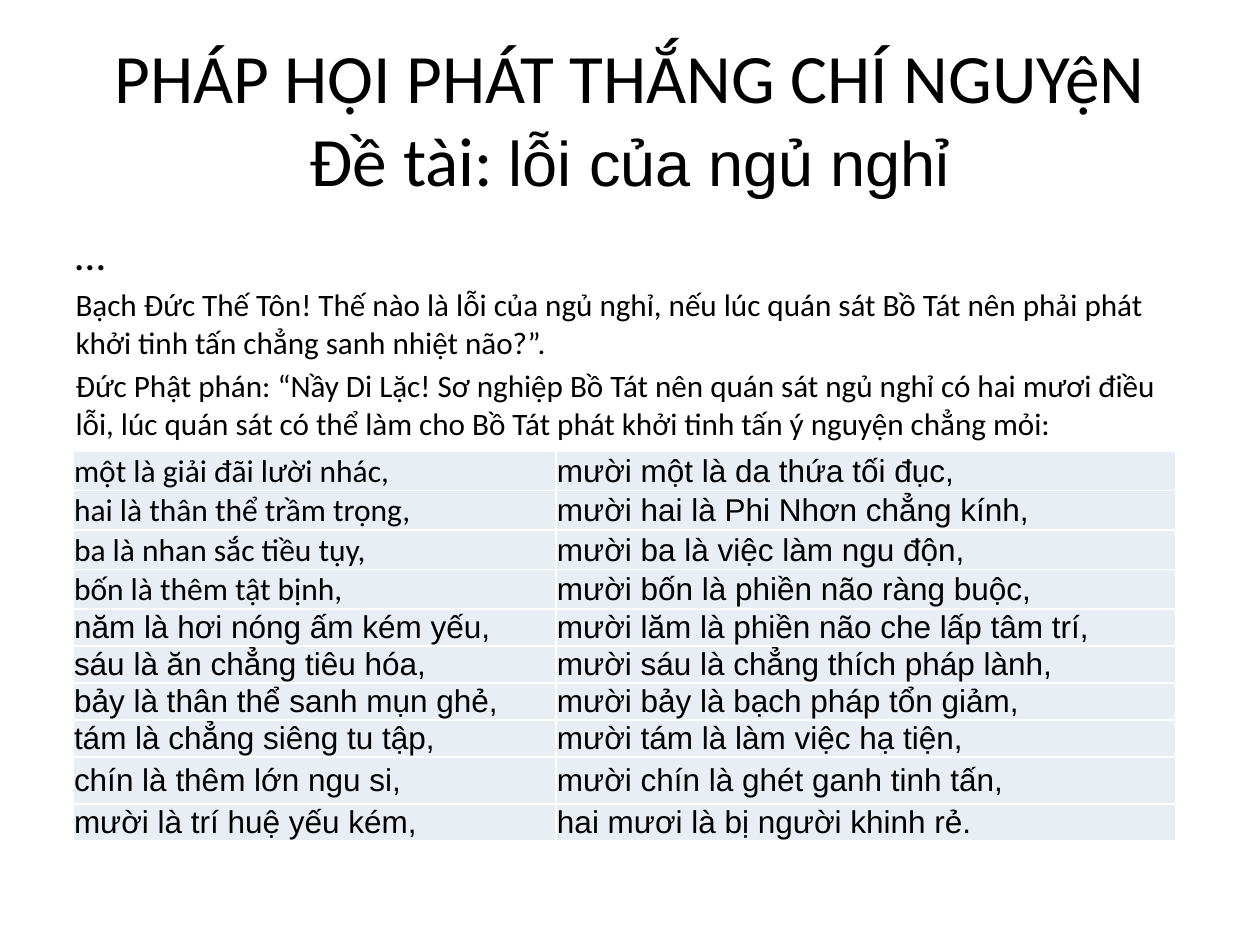
from copy import deepcopy
from dataclasses import dataclass

from lxml.etree import SubElement
from pptx import Presentation
from pptx.dml.color import RGBColor as Rgb
from pptx.enum.text import MSO_ANCHOR as Anchor, MSO_AUTO_SIZE as Fit, PP_ALIGN as Align
from pptx.oxml.ns import qn
from pptx.util import Inches, Pt

SCALE = Inches(1) / 126


@dataclass(frozen=True)
class Theme:
    main: str = "Calibri"
    alt: str = "Arial"
    ink: Rgb = Rgb(0, 0, 0)
    band: Rgb = Rgb(0xE9, 0xED, 0xF4)
    rule: str = "FFFFFF"
    head: float = 39.6
    sub: float = 36
    lead: float = 24.8
    body: float = 17.8
    cell: float = 18


THEME = Theme()

HEAD = "PHÁP HỘI PHÁT THẮNG CHÍ NGUYệN\vĐề tài: "
TOPIC = "lỗi của ngủ nghỉ"
BODY = [
    "…",
    "Bạch Đức Thế Tôn! Thế nào là lỗi của ngủ nghỉ, nếu lúc quán sát Bồ Tát "
    "nên phải phát khởi tinh tấn chẳng sanh nhiệt não?”.",
    "Đức Phật phán: “Nầy Di Lặc! Sơ nghiệp Bồ Tát nên quán sát ngủ nghỉ có hai "
    "mươi điều lỗi, lúc quán sát có thể làm cho Bồ Tát phát khởi tinh tấn ý "
    "nguyện chẳng mỏi:",
]
FAULTS = [
    ("một là giải đãi lười nhác,", "mười một là da thứa tối đục,"),
    ("hai là thân thể trầm trọng,", "mười hai là Phi Nhơn chẳng kính,"),
    ("ba là nhan sắc tiều tụy,", "mười ba là việc làm ngu độn,"),
    ("bốn là thêm tật bịnh,", "mười bốn là phiền não ràng buộc,"),
    ("năm là hơi nóng ấm kém yếu,", "mười lăm là phiền não che lấp tâm trí,"),
    ("sáu là ăn chẳng tiêu hóa,", "mười sáu là chẳng thích pháp lành,"),
    ("bảy là thân thể sanh mụn ghẻ,", "mười bảy là bạch pháp tổn giảm,"),
    ("tám là chẳng siêng tu tập,", "mười tám là làm việc hạ tiện,"),
    ("chín là thêm lớn ngu si,", "mười chín là ghét ganh tinh tấn,"),
    ("mười là trí huệ yếu kém,", "hai mươi là bị người khinh rẻ."),
]
COLS = (483, 620)
ROW, TALL = 37, 47
TALL_ROW = 8
MAIN_ROWS = 4  # rows whose first cell uses the main font


def px(n):
    return round(n * SCALE)


def place(shape, *box):
    shape.left, shape.top, shape.width, shape.height = map(px, box)


def style(run, size, face=THEME.main):
    font = run.font
    font.size, font.name = Pt(size), face
    font.color.rgb = THEME.ink


def add_title(shape):
    place(shape, 63, 38, 1134, 158)
    frame = shape.text_frame
    frame.text = HEAD
    frame.auto_size = Fit.NONE
    frame.vertical_anchor = Anchor.MIDDLE
    para = frame.paragraphs[0]
    para.alignment = Align.CENTER
    for run in para.runs:
        style(run, THEME.head)
    # The line break carries the same size as the text around it.
    look = para.runs[0].font._element
    para._p.find(qn("a:br")).append(deepcopy(look))
    topic = para.add_run()
    topic.text = TOPIC
    style(topic, THEME.sub, THEME.alt)


def add_body(shape):
    place(shape, 63, 221, 1134, 661)
    frame = shape.text_frame
    frame.text = "\n".join(BODY)
    frame.auto_size = Fit.NONE
    for i, para in enumerate(frame.paragraphs):
        props = para._p.get_or_add_pPr()
        props.set("marL", "0")
        props.set("indent", "0")
        SubElement(props, qn("a:buNone"))
        style(para.runs[0], THEME.body if i else THEME.lead)


def add_rules(cell):
    """Draw a thin line on each side; call before the fill is set."""
    props = cell._tc.get_or_add_tcPr()
    for side in ("lnL", "lnR", "lnT", "lnB"):
        line = SubElement(props, qn(f"a:{side}"), w=str(Pt(1)))
        fill = SubElement(line, qn("a:solidFill"))
        SubElement(fill, qn("a:srgbClr"), val=THEME.rule)


def fill_cell(cell, text, main):
    cell.text = text
    cell.vertical_anchor = Anchor.MIDDLE
    cell.margin_left = cell.margin_right = cell.margin_top = px(1)
    cell.margin_bottom = 0
    add_rules(cell)
    cell.fill.solid()
    cell.fill.fore_color.rgb = THEME.band
    para = cell.text_frame.paragraphs[0]
    para.alignment = Align.JUSTIFY if main else Align.LEFT
    style(para.runs[0], THEME.cell, THEME.main if main else THEME.alt)


def add_faults(slide):
    high = [TALL if i == TALL_ROW else ROW for i in range(len(FAULTS))]
    box = map(px, (73, 451, sum(COLS), sum(high)))
    grid = slide.shapes.add_table(len(FAULTS), len(COLS), *box).table
    grid.first_row = grid.horz_banding = False
    for col, wide in zip(grid.columns, COLS):
        col.width = px(wide)
    for r, pair in enumerate(FAULTS):
        grid.rows[r].height = px(high[r])
        for c, text in enumerate(pair):
            fill_cell(grid.cell(r, c), text, c == 0 and r < MAIN_ROWS)


def main():
    deck = Presentation()
    deck.slide_width, deck.slide_height = px(1260), px(945)
    slide = deck.slides.add_slide(deck.slide_layouts[1])
    add_title(slide.shapes.title)
    add_body(slide.placeholders[1])
    add_faults(slide)
    deck.save("out.pptx")


if __name__ == "__main__":
    main()
